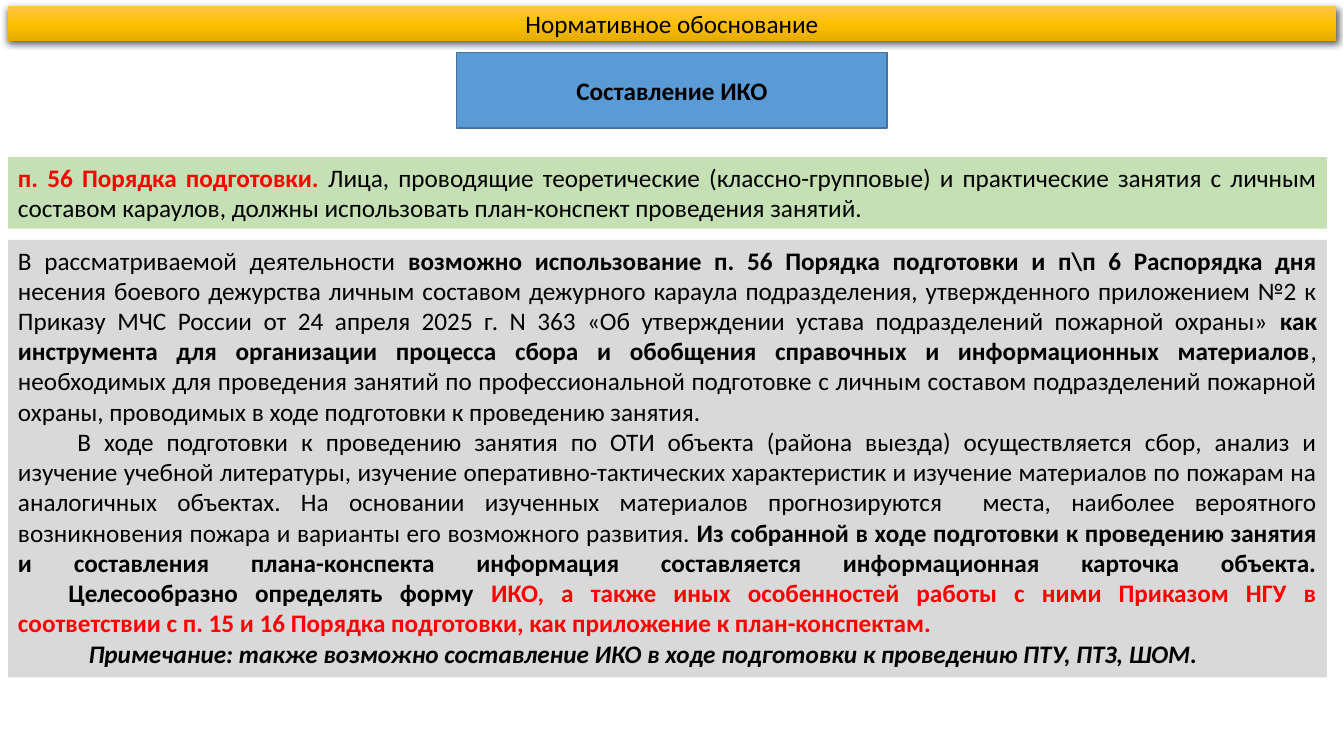
from dataclasses import dataclass

from lxml import etree
from pptx import Presentation
from pptx.dml import color as dml
from pptx.enum import shapes, text
from pptx.oxml import ns, parse_xml
from pptx.util import Inches, Pt

COLORS = {
    "black": "000000", "red": "FF0000", "blue": "5B9BD5", "blue_edge": "43739E",
    "green": "C5E0B4", "gray": "D9D9D9",
    "gold_light": "FFC64B", "gold": "FFC000", "gold_dark": "E3AB00",
}
FONT = "Calibri"
NAMESPACE = ns.nsdecls("a")


@dataclass
class Span:
    text: str
    bold: bool = False
    italic: bool = False
    color: str = "black"
    new_line: bool = False


@dataclass
class Para:
    spans: list[Span]
    align: text.PP_ALIGN = text.PP_ALIGN.JUSTIFY
    indent: float = 0
    tab: float = 0


@dataclass
class Box:
    left: float
    top: float
    width: float
    height: float
    fill: str
    paras: list[Para]
    edge: str = ""
    heading: bool = False


def rgb(name: str) -> dml.RGBColor:
    return dml.RGBColor.from_string(COLORS[name])


def write_para(paragraph, para: Para) -> None:
    paragraph.alignment = para.align
    properties = paragraph._p.get_or_add_pPr()
    if para.indent:
        properties.set("marL", "0")
        properties.set("indent", str(Inches(para.indent)))
    if para.tab:
        tabs = etree.SubElement(properties, ns.qn("a:tabLst"))
        etree.SubElement(tabs, ns.qn("a:tab"), pos=str(Inches(para.tab)), algn="l")
    for span in para.spans:
        if span.new_line:
            paragraph.add_line_break()
        run = paragraph.add_run()
        run.text = span.text
        run.font.name, run.font.size = FONT, Pt(18)
        run.font.bold, run.font.italic = span.bold, span.italic
        run.font.color.rgb = rgb(span.color)


def draw_box(page, box: Box):
    shape = page.shapes.add_shape(
        shapes.MSO_SHAPE.RECTANGLE,
        *(Inches(n) for n in (box.left, box.top, box.width, box.height)))
    shape.shadow.inherit = False
    shape.fill.solid()
    shape.fill.fore_color.rgb = rgb(box.fill)
    if box.edge:
        shape.line.color.rgb = rgb(box.edge)
        shape.line.width = Pt(1)
    else:
        shape.line.fill.background()
    frame = shape.text_frame
    frame.word_wrap = True
    if box.heading:
        frame.vertical_anchor = text.MSO_ANCHOR.MIDDLE
    else:
        frame.vertical_anchor = text.MSO_ANCHOR.TOP
        frame.auto_size = text.MSO_AUTO_SIZE.SHAPE_TO_FIT_TEXT
    for index, para in enumerate(box.paras):
        write_para(frame.add_paragraph() if index else frame.paragraphs[0], para)
    return shape


def add_gold_finish(shape) -> None:
    """Give the title bar its vertical gradient and soft shadow."""
    stops = "".join(
        f'<a:gs pos="{pos}"><a:srgbClr val="{COLORS[name]}"/></a:gs>'
        for pos, name in ((0, "gold_light"), (50000, "gold"), (100000, "gold_dark")))
    properties = shape._element.spPr
    properties.replace(properties.find(ns.qn("a:solidFill")), parse_xml(
        f'<a:gradFill {NAMESPACE} rotWithShape="1"><a:gsLst>{stops}</a:gsLst>'
        '<a:lin ang="5400000" scaled="0"/></a:gradFill>'))
    properties.find(ns.qn("a:effectLst")).append(parse_xml(
        f'<a:outerShdw {NAMESPACE} blurRad="{Pt(4.5)}" dist="{Pt(1.5)}" dir="5400000" '
        f'algn="ctr" rotWithShape="0"><a:srgbClr val="{COLORS["black"]}">'
        '<a:alpha val="63000"/></a:srgbClr></a:outerShdw>'))


CENTER = text.PP_ALIGN.CENTER
TITLE = Box(0.08, 0.06, 13.17, 0.35, "gold",
            [Para([Span("Нормативное обоснование")], CENTER)], heading=True)
TOPIC = Box(4.53, 0.52, 4.27, 0.75, "blue",
            [Para([Span("Составление ИКО", bold=True)], CENTER)],
            edge="blue_edge", heading=True)
RULE = Box(0.08, 1.56, 13.08, 0.71, "green", [Para([
    Span("п. 56 Порядка подготовки. ", bold=True, color="red"),
    Span("Лица, проводящие теоретические (классно-групповые) и практические занятия "
         "с личным составом караулов, должны использовать план-конспект проведения занятий."),
])])
EXPLANATION = Box(0.08, 2.38, 13.08, 4.34, "gray", [
    Para([
        Span("В рассматриваемой деятельности "),
        Span("возможно использование п. 56 Порядка подготовки и п\\п 6 Распорядка дня ",
             bold=True),
        Span("несения боевого дежурства личным составом дежурного караула подразделения, "
             "утвержденного приложением №2 к Приказу МЧС России от 24 апреля 2025 г. N 363 "
             "«Об утверждении устава подразделений пожарной охраны» "),
        Span("как инструмента для организации процесса сбора и обобщения справочных "
             "и информационных материалов", bold=True),
        Span(", необходимых для проведения занятий по профессиональной подготовке с личным "
             "составом подразделений пожарной охраны, проводимых в ходе подготовки "
             "к проведению занятия. "),
    ]),
    Para([
        Span("В ходе подготовки к проведению занятия по ОТИ объекта (района выезда) "
             "осуществляется сбор, анализ и изучение учебной литературы, изучение "
             "оперативно-тактических характеристик и изучение материалов по пожарам на "
             "аналогичных объектах. На основании изученных материалов прогнозируются  места, "
             "наиболее вероятного возникновения пожара и варианты его возможного развития. "),
        Span("Из собранной в ходе подготовки к проведению занятия и составления "
             "плана-конспекта информация составляется информационная карточка объекта.",
             bold=True),
        Span("\tЦелесообразно определять форму ", bold=True, new_line=True),
        Span("ИКО, а также иных особенностей работы с ними Приказом НГУ в соответствии "
             "с п. 15 и 16 Порядка подготовки, как приложение к план-конспектам.",
             bold=True, color="red"),
    ], indent=0.59, tab=1.24),
    Para([
        Span("Примечание: также возможно составление ИКО в ходе подготовки к проведению "
             "ПТУ, ПТЗ, ШОМ.", bold=True, italic=True),
    ], indent=0.7),
])


def main() -> None:
    deck = Presentation()
    deck.slide_width, deck.slide_height = Inches(13.33), Inches(7.5)
    page = deck.slides.add_slide(deck.slide_layouts[6])
    add_gold_finish(draw_box(page, TITLE))
    for box in (TOPIC, RULE, EXPLANATION):
        draw_box(page, box)
    deck.save("out.pptx")


if __name__ == "__main__":
    main()
